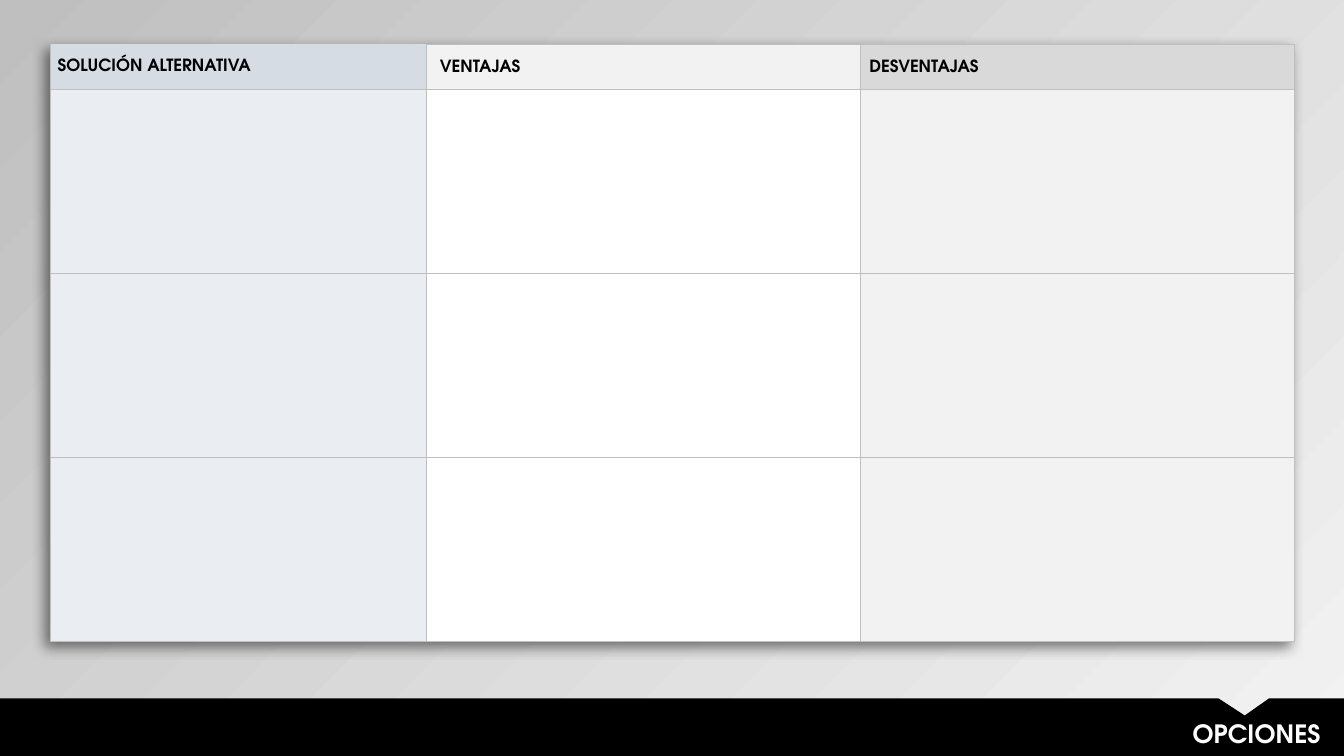
from lxml.etree import SubElement, fromstring
from pptx import Presentation
from pptx.dml.color import RGBColor
from pptx.enum.text import MSO_ANCHOR, MSO_AUTO_SIZE, PP_ALIGN
from pptx.oxml.ns import nsdecls, qn
from pptx.util import Cm, Pt

WIDTH, HEIGHT = 33.87, 19.05
BAND_TOP = 17.6
COLUMN_WIDTHS = [9.47, 10.94, 10.94]
ROW_HEIGHTS = [1.14] + [4.63] * 3
HEADINGS = ["SOLUCIÓN ALTERNATIVA", " VENTAJAS", "DESVENTAJAS"]
HEADING_FILLS = ["D6DCE4", "F2F2F2", "D9D9D9"]
BODY_FILLS = ["EAEEF3", "FFFFFF", "F2F2F2"]
# left, top, right, bottom
HEADING_MARGINS = [(0.18, 0, 0.18, 0)] + [(0.23, 0.03, 0.03, 0)] * 2


def colour(value):
    return RGBColor.from_string(value)


class OptionsSlide:
    font = "TeX Gyre Adventor"
    border = "BFBFBF"

    def __init__(self, deck):
        self.page = deck.slides.add_slide(deck.slide_layouts[6])

    def background(self, start, end, angle):
        fill = self.page.background.fill
        fill.gradient()
        fill.gradient_angle = angle
        for stop, value in zip(fill.gradient_stops, (start, end)):
            stop.color.rgb = colour(value)

    def add_span(self, para, text, size, value):
        span = para.add_run()
        span.text = text
        span.font.name = self.font
        span.font.size = Pt(size)
        span.font.bold = True
        span.font.color.rgb = colour(value)

    def cell_borders(self, cell, hidden=""):
        properties = cell._tc.get_or_add_tcPr()
        for side in "LRTB":
            line = SubElement(properties, qn(f"a:ln{side}"), w=str(Pt(0.5)))
            if side in hidden:
                SubElement(line, qn("a:noFill"))
            else:
                solid = SubElement(line, qn("a:solidFill"))
                SubElement(solid, qn("a:srgbClr"), val=self.border)

    def table_shadow(self, table):
        table._tbl.tblPr.insert(0, fromstring(
            f'<a:effectLst {nsdecls("a")}>'
            '<a:outerShdw blurRad="114300" dist="63500" dir="8100000" algn="tr" rotWithShape="0">'
            '<a:srgbClr val="000000"><a:alpha val="50000"/></a:srgbClr>'
            '</a:outerShdw></a:effectLst>'))

    def table(self, left, top):
        frame = self.page.shapes.add_table(
            len(ROW_HEIGHTS), len(COLUMN_WIDTHS), Cm(left), Cm(top),
            Cm(sum(COLUMN_WIDTHS)), Cm(sum(ROW_HEIGHTS)))
        table = frame.table
        table.first_row = table.horz_banding = False
        self.table_shadow(table)
        for column, width in zip(table.columns, COLUMN_WIDTHS):
            column.width = Cm(width)
        for index, height in enumerate(ROW_HEIGHTS):
            table.rows[index].height = Cm(height)
            fills = BODY_FILLS if index else HEADING_FILLS
            for number, value in enumerate(fills):
                cell = table.cell(index, number)
                self.cell_borders(cell, "T" if index == number == 0 else "")
                cell.fill.solid()
                cell.fill.fore_color.rgb = colour(value)
        for number, heading in enumerate(HEADINGS):
            self.heading(table.cell(0, number), heading, HEADING_MARGINS[number])

    def heading(self, cell, text, margins):
        left, top, right, bottom = map(Cm, margins)
        cell.margin_left, cell.margin_top = left, top
        cell.margin_right, cell.margin_bottom = right, bottom
        cell.vertical_anchor = MSO_ANCHOR.MIDDLE
        self.add_span(cell.text_frame.paragraphs[0], text, 12, "000000")

    def outline(self, points, value):
        start, *others = [(Cm(x), Cm(y)) for x, y in points]
        builder = self.page.shapes.build_freeform(*start)
        builder.add_line_segments(others, close=True)
        shape = builder.convert_to_shape()
        shape.shadow.inherit = False
        shape.fill.solid()
        shape.fill.fore_color.rgb = colour(value)
        shape.line.fill.background()

    def title(self, text, left, top, width, height):
        box = self.page.shapes.add_textbox(Cm(left), Cm(top), Cm(width), Cm(height))
        box.text_frame.word_wrap = True
        box.text_frame.auto_size = MSO_AUTO_SIZE.SHAPE_TO_FIT_TEXT
        para = box.text_frame.paragraphs[0]
        para.alignment = PP_ALIGN.RIGHT
        self.add_span(para, text, 18, "FFFFFF")


def main():
    deck = Presentation()
    deck.slide_width, deck.slide_height = Cm(WIDTH), Cm(HEIGHT)
    slide = OptionsSlide(deck)
    slide.background("F2F2F2", "BFBFBF", 135)
    slide.table(1.27, 1.12)
    notch = [(30.71, BAND_TOP), (31.37, 18.03), (31.98, BAND_TOP)]
    slide.outline([(0, BAND_TOP), *notch, (WIDTH, BAND_TOP),
                   (WIDTH, HEIGHT), (0, HEIGHT)], "000000")
    slide.title("OPCIONES", 10.52, 17.98, 23.01, 1.02)
    deck.save("out.pptx")


if __name__ == "__main__":
    main()
